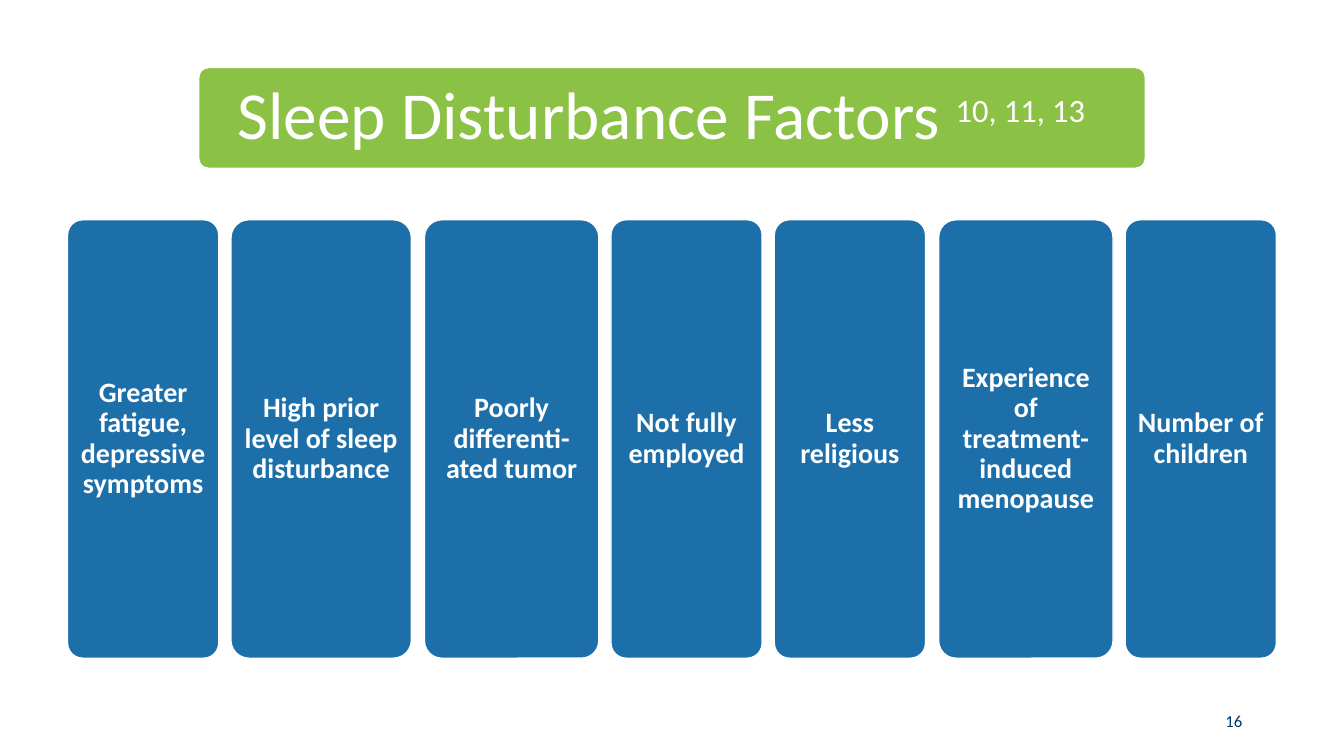
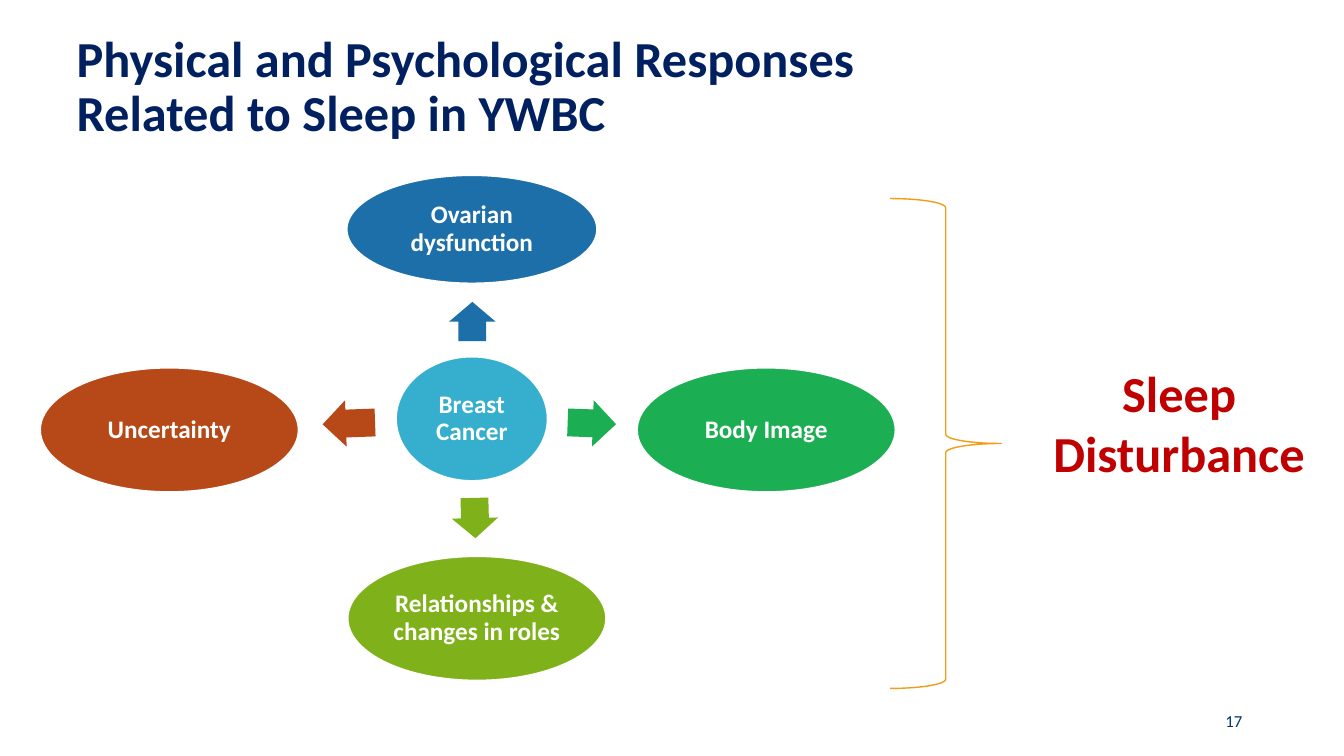
from pptx import Presentation
from pptx import util as u
from pptx.dml import color
from pptx.enum import shapes, text

PX = 9144  # one px is a hundredth of an inch

COLORS = {
    "white": "FFFFFF", "navy": "002060", "number": "00356B", "banner": "8BC145",
    "blue": "1D6FA9", "cyan": "36AFCE", "green": "1CAE53", "lime": "7FB21A",
    "rust": "B74919", "brace": "F19D19", "red": "C00000",
}
SHAPE = shapes.MSO_SHAPE
ALIGN = text.PP_ALIGN
ANCHOR = text.MSO_ANCHOR


class Deck:
    """Holds the style and the current slide."""

    font = "Calibri"

    def __init__(self, width, height):
        self.presentation = Presentation()
        self.presentation.slide_width = u.Emu(width * PX)
        self.presentation.slide_height = u.Emu(height * PX)
        self.slide = None

    def rgb(self, name):
        return color.RGBColor.from_string(COLORS[name])

    def new_slide(self, number):
        layout = self.presentation.slide_layouts[5]
        self.slide = self.presentation.slides.add_slide(layout)
        self.label((942, 695, 300, 40), str(number), 12, "number",
                   align=ALIGN.RIGHT, anchor=ANCHOR.MIDDLE)

    def place(self, box):
        return [u.Emu(length * PX) for length in box]

    def set_text(self, shape, words, size, tint, bold=False, align=ALIGN.CENTER,
                 anchor=ANCHOR.MIDDLE, spacing=0.9, insets=(10, 5, 10, 5)):
        frame = shape.text_frame
        frame.word_wrap = True
        frame.auto_size = text.MSO_AUTO_SIZE.NONE
        frame.vertical_anchor = anchor
        (frame.margin_left, frame.margin_top,
         frame.margin_right, frame.margin_bottom) = self.place(insets)
        paragraph = frame.paragraphs[0]
        paragraph.text = words
        paragraph.alignment = align
        paragraph.line_spacing = spacing
        for run in paragraph.runs:
            self.style(run, size, tint, bold)
        return paragraph

    def style(self, run, size, tint, bold=False):
        run.font.name = self.font
        run.font.size = u.Pt(size)
        run.font.bold = bold
        run.font.color.rgb = self.rgb(tint)

    def title(self, box, words, size, tint, **options):
        title = self.slide.shapes.title
        title.left, title.top, title.width, title.height = self.place(box)
        return self.set_text(title, words, size, tint, **options)

    def superscript(self, paragraph, words, size, tint):
        run = paragraph.add_run()
        run.text = words
        self.style(run, size, tint)
        run.font._element.set("baseline", "30000")

    def label(self, box, words, size, tint, **options):
        textbox = self.slide.shapes.add_textbox(*self.place(box))
        self.set_text(textbox, words, size, tint, **{"spacing": 1.0, **options})

    def shape(self, kind, box, fill=None, line=None, adjustments=(), rotation=0):
        shape = self.slide.shapes.add_shape(kind, *self.place(box))
        shape.shadow.inherit = False
        shape.rotation = rotation
        for index, value in enumerate(adjustments):
            shape.adjustments[index] = value
        if fill:
            shape.fill.solid()
            shape.fill.fore_color.rgb = self.rgb(fill)
        else:
            shape.fill.background()
        if line:
            shape.line.color.rgb = self.rgb(line)
            shape.line.width = u.Pt(1)
        else:
            shape.line.fill.background()
        return shape

    def card(self, box, words):
        card = self.shape(SHAPE.ROUNDED_RECTANGLE, box, "blue", "white", [0.1])
        self.set_text(card, words, 20, "white", bold=True, insets=(7, 8, 7, 8))

    def bubble(self, box, words, fill):
        bubble = self.shape(SHAPE.OVAL, box, fill, "white")
        self.set_text(bubble, words, 18, "white", bold=True, insets=(3, 3, 3, 3))

    def arrow(self, box, fill, rotation):
        self.shape(SHAPE.RIGHT_ARROW, box, fill, None, [0.6, 0.5], rotation)


def build_factors(deck):
    deck.new_slide(16)

    # Banner behind the title
    banner = deck.shape(SHAPE.ROUNDED_RECTANGLE, (197, 67, 939, 100),
                        "banner", "white", [0.1])
    deck.slide.shapes.title.element.addprevious(banner.element)
    heading = deck.title((200, 70, 934, 94), "Sleep Disturbance Factors ", 48,
                         "white", insets=(20, 20, 42, 20))
    deck.superscript(heading, "10, 11, 13", 40, "white")

    # Row of factors, equally spaced between the margins
    factors = [
        ("Greater fatigue, depressive symptoms", 150),
        ("High prior level of sleep disturbance", 179),
        ("Poorly differenti-ated tumor", 173),
        ("Not fully employed", 150),
        ("Less religious", 150),
        ("Experience of treatment-induced menopause", 173),
        ("Number of children", 150),
    ]
    left, right = 67, 1266
    gap = (right - left - sum(width for _, width in factors)) / (len(factors) - 1)
    for words, width in factors:
        deck.card((round(left), 218, width, 435), words)
        left += width + gap


def build_responses(deck):
    deck.new_slide(17)
    deck.title((66, 51, 1184, 73),
               "Physical and Psychological Responses\vRelated to Sleep in YWBC",
               36, "navy", bold=True, align=ALIGN.LEFT)

    # Hub with four responses around it
    deck.bubble((393, 354, 150, 123), "Breast Cancer", "cyan")
    responses = [
        ("Ovarian dysfunction", "blue", (344, 174, 248, 107), (449, 296, 39, 46), 270),
        ("Body Image", "green", (632, 365, 256, 123), (563, 397, 48, 46), 2.1),
        ("Relationships & changes in roles", "lime", (345, 552, 256, 123),
         (451, 491, 40, 46), 88.5),
        ("Uncertainty", "rust", (40, 365, 256, 123), (320, 397, 52, 46), 177.9),
    ]
    for words, fill, bubble_box, arrow_box, rotation in responses:
        deck.arrow(arrow_box, fill, rotation)
        deck.bubble(bubble_box, words, fill)

    # Brace leading to the outcome
    deck.shape(SHAPE.RIGHT_BRACE, (883, 197, 110, 486), line="brace")
    deck.label((1005, 354, 329, 131), "Sleep Disturbance", 36, "red",
               bold=True, anchor=ANCHOR.TOP)


def main():
    deck = Deck(1333, 750)
    build_factors(deck)
    build_responses(deck)
    deck.presentation.save("out.pptx")


if __name__ == "__main__":
    main()
